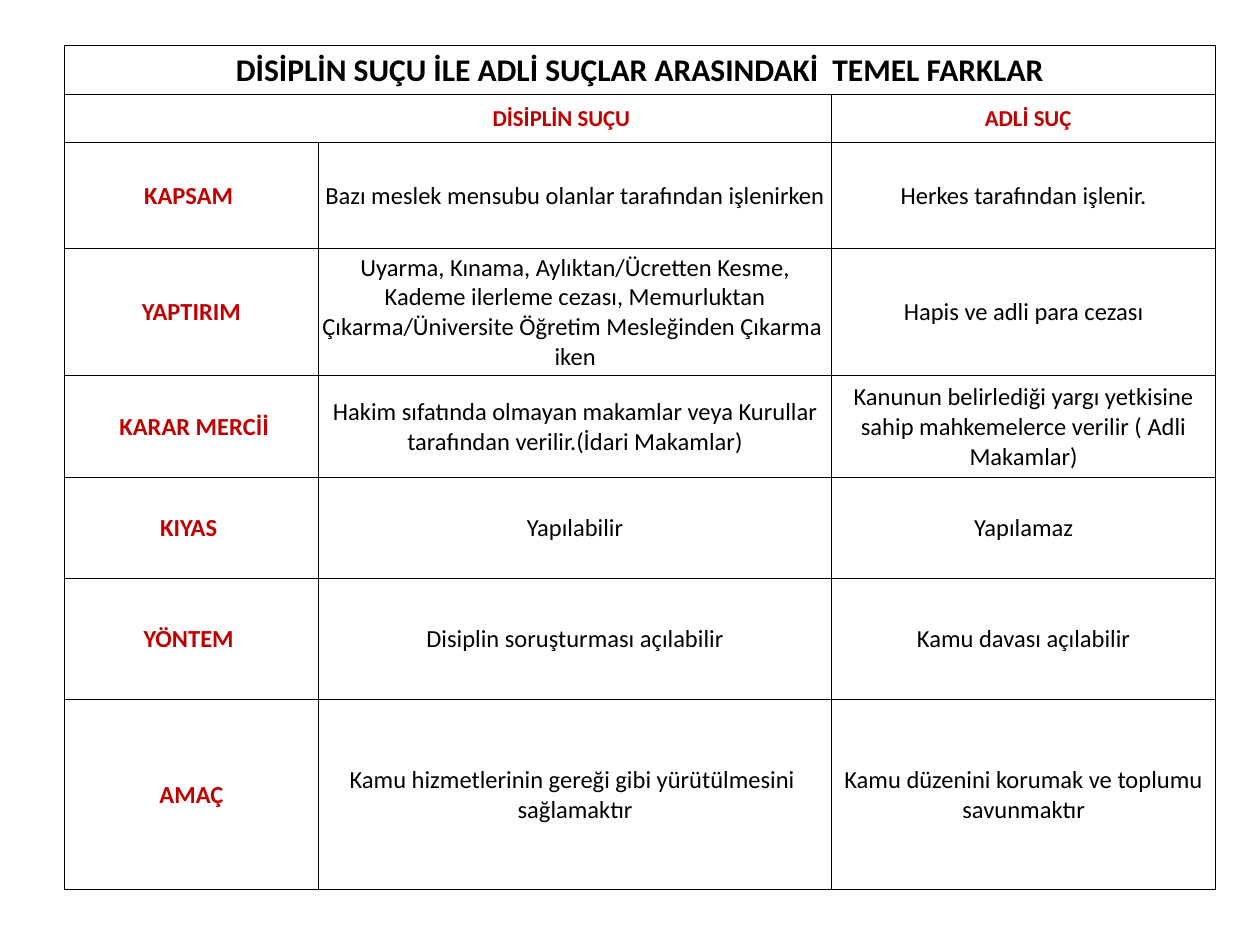
from lxml.etree import SubElement
from pptx import Presentation
from pptx.dml.color import RGBColor
from pptx.enum.text import MSO_ANCHOR as Anchor, PP_ALIGN as Align
from pptx.oxml.ns import qn
from pptx.util import Inches, Pt

COLORS = {"paper": "FFFFFF", "ink": "000000", "accent": "C00000"}
FORMATS = {
    "title": {"size": Pt(18), "bold": True, "color": "ink"},
    "header": {"size": Pt(13), "bold": True, "color": "accent"},
    "label": {"size": Pt(14), "bold": True, "color": "accent"},
    "body": {"size": Pt(14), "bold": False, "color": "ink"},
}
TITLE = "DİSİPLİN SUÇU İLE ADLİ SUÇLAR ARASINDAKİ  TEMEL FARKLAR"
HEADERS = ("DİSİPLİN SUÇU ", "ADLİ SUÇ")
COMPARISON = [
    ("KAPSAM ", "Bazı meslek mensubu olanlar tarafından işlenirken",
     "Herkes tarafından işlenir."),
    ("YAPTIRIM",
     "Uyarma, Kınama, Aylıktan/Ücretten Kesme, Kademe ilerleme cezası, "
     "Memurluktan Çıkarma/Üniversite Öğretim Mesleğinden Çıkarma  iken",
     "Hapis ve adli para cezası"),
    (" KARAR MERCİİ",
     "Hakim sıfatında olmayan makamlar veya Kurullar tarafından "
     "verilir.(İdari Makamlar)",
     "Kanunun belirlediği yargı yetkisine sahip mahkemelerce verilir "
     "( Adli Makamlar)"),
    ("KIYAS ", "Yapılabilir", "Yapılamaz"),
    ("YÖNTEM ", "Disiplin soruşturması açılabilir", "Kamu davası açılabilir"),
    ("AMAÇ", "Kamu hizmetlerinin gereği gibi yürütülmesini  sağlamaktır",
     "Kamu düzenini korumak ve toplumu savunmaktır"),
]
COLUMN_WIDTHS = (2.02, 4.07, 3.05)
ROW_HEIGHTS = (0.39, 0.38, 0.84, 1.01, 0.81, 0.8, 0.96, 1.51)


def rgb(name):
    return RGBColor.from_string(COLORS[name])


def add_borders(cell):
    properties = cell._tc.get_or_add_tcPr()
    for side in ("lnL", "lnR", "lnT", "lnB"):
        line = SubElement(properties, qn(f"a:{side}"), w=str(Pt(0.5)))
        fill = SubElement(line, qn("a:solidFill"))
        SubElement(fill, qn("a:srgbClr"), val=COLORS["ink"])


def style_cell(cell):
    add_borders(cell)
    cell.fill.solid()
    cell.fill.fore_color.rgb = rgb("paper")
    cell.vertical_anchor = Anchor.MIDDLE
    cell.margin_left = cell.margin_right = cell.margin_top = Inches(0.01)
    cell.margin_bottom = 0


def write_cell(cell, text, kind, indent=0.01):
    cell.margin_left = Inches(indent)
    para = cell.text_frame.paragraphs[0]
    para.alignment = Align.CENTER
    span = para.add_run()
    span.text = text
    span.font.name = "Calibri"
    for name, value in FORMATS[kind].items():
        if name == "color":
            span.font.color.rgb = rgb(value)
        else:
            setattr(span.font, name, value)


def add_comparison_table(page, left, top, width, height):
    frame = page.shapes.add_table(
        len(ROW_HEIGHTS), len(COLUMN_WIDTHS),
        Inches(left), Inches(top), Inches(width), Inches(height))
    table = frame.table
    table.first_row = table.horz_banding = False
    for column, size in zip(table.columns, COLUMN_WIDTHS):
        column.width = Inches(size)
    for row, size in zip(table.rows, ROW_HEIGHTS):
        row.height = Inches(size)
    for cell in table.iter_cells():
        style_cell(cell)

    # Title and column headers
    table.cell(0, 0).merge(table.cell(0, 2))
    table.cell(1, 0).merge(table.cell(1, 1))
    write_cell(table.cell(0, 0), TITLE, "title")
    write_cell(table.cell(1, 0), HEADERS[0], "header", indent=1.85)
    write_cell(table.cell(1, 2), HEADERS[1], "header", indent=0.08)

    # One row for each point of comparison
    for row, texts in enumerate(COMPARISON, start=2):
        for column, text in enumerate(texts):
            write_cell(table.cell(row, column), text,
                       "body" if column else "label")


def main():
    deck = Presentation()
    deck.slide_width, deck.slide_height = Inches(10), Inches(7.5)
    page = deck.slides.add_slide(deck.slide_layouts[6])
    add_comparison_table(page, 0.51, 0.36, sum(COLUMN_WIDTHS), sum(ROW_HEIGHTS))
    deck.save("out.pptx")


if __name__ == "__main__":
    main()
